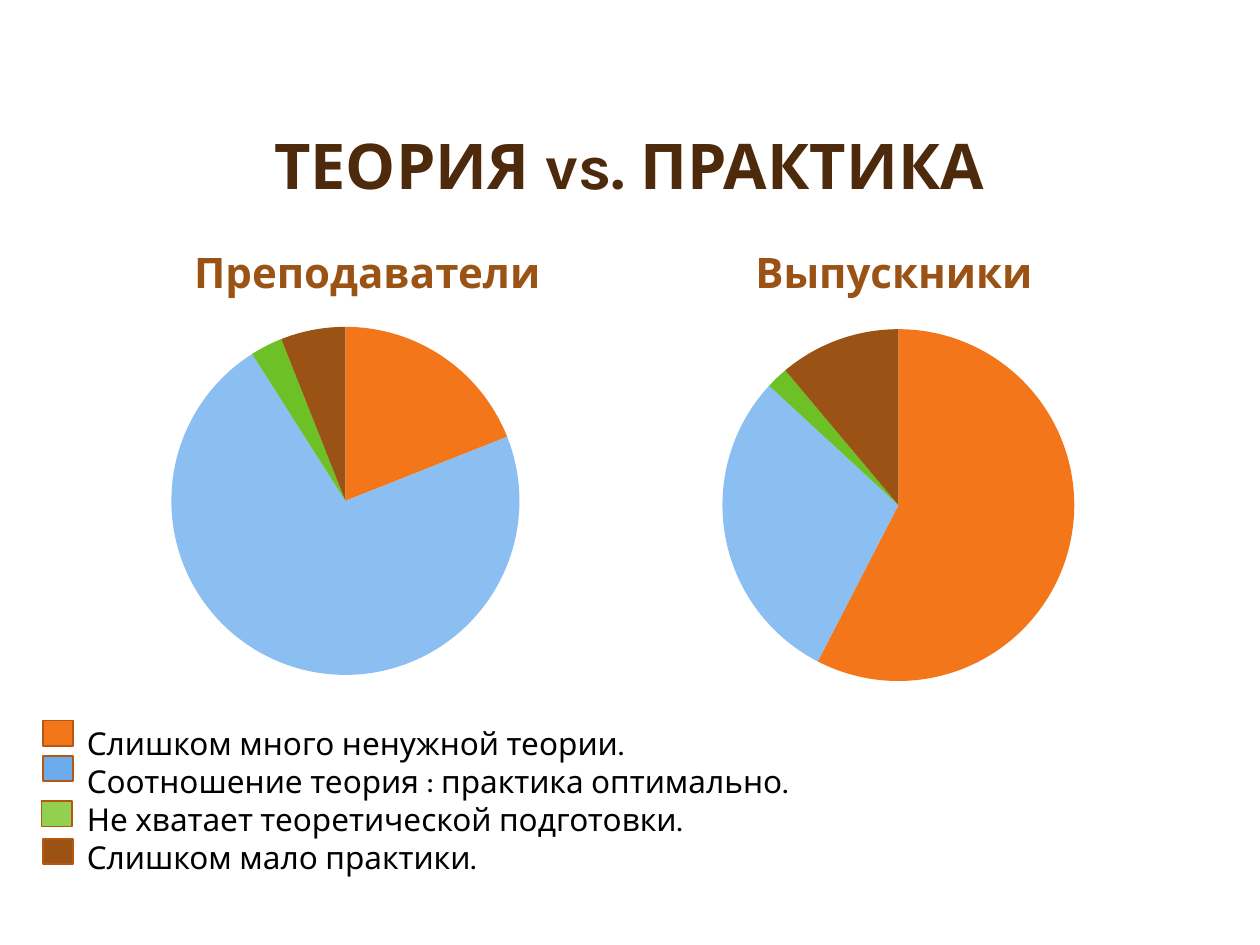
import pptx
import pptx.chart.data
import pptx.dml.color
import pptx.enum.chart
import pptx.enum.shapes
import pptx.enum.text
import pptx.util
from lxml import etree
from pptx.oxml.ns import qn

Pt = pptx.util.Pt
FONT = "Karla"
COLORS = {
    "title": "4D2A0B", "heading": "9A5315", "text": "000000", "border": "B45813",
    "orange": "F3771A", "blue": "8BBEF1", "green": "6DC025", "brown": "9A5315",
    "key_blue": "6CACEC", "key_green": "92D050",
}
SLICES = ["orange", "blue", "green", "brown"]
LEGEND = [
    # text, key colour, key left, key top
    ("Слишком много ненужной теории.", "orange", 24.5, 411.8),
    ("Соотношение теория : практика оптимально.", "key_blue", 24.5, 432),
    ("Не хватает теоретической подготовки.", "key_green", 23.8, 457.9),
    ("Слишком мало практики.", "brown", 24.5, 479.5),
]


def rgb(name):
    return pptx.dml.color.RGBColor.from_string(COLORS[name])


def set_font(font, size, color, bold=False):
    font.name, font.size, font.bold = FONT, Pt(size), bold
    font.color.rgb = rgb(color)


def add_text(s, box, lines, size, color, bold=False, centered=False, spacing=None):
    """Add a text box with one paragraph per line; centred text sits at the bottom."""
    tf = s.shapes.add_textbox(*map(Pt, box)).text_frame
    tf.word_wrap = True
    if centered:
        tf.vertical_anchor = pptx.enum.text.MSO_ANCHOR.BOTTOM
    for i, line in enumerate(lines):
        p = tf.add_paragraph() if i else tf.paragraphs[0]
        if centered:
            p.alignment = pptx.enum.text.PP_ALIGN.CENTER
        if spacing:
            p.line_spacing = spacing
        r = p.add_run()
        r.text = line
        set_font(r.font, size, color, bold)


def set_plot_layout(chart, x, y, w, h):
    """Place the inner plot area, in fractions of the chart."""
    plot_area = chart.plots[0]._element.getparent()
    layout = plot_area.find(qn("c:layout"))
    if layout is None:
        layout = etree.Element(qn("c:layout"))
        plot_area.insert(0, layout)
    manual = etree.SubElement(layout, qn("c:manualLayout"))
    settings = [("layoutTarget", "inner"), ("xMode", "edge"), ("yMode", "edge"),
                ("x", x), ("y", y), ("w", w), ("h", h)]
    for tag, value in settings:
        etree.SubElement(manual, qn(f"c:{tag}")).set("val", str(value))


def add_pie(s, box, values, layout):
    data = pptx.chart.data.CategoryChartData()
    data.categories = ["1", "2", "3", "4"]
    data.add_series("Series 1", values)
    chart = s.shapes.add_chart(
        pptx.enum.chart.XL_CHART_TYPE.PIE, *map(Pt, box), data).chart
    chart.has_title = False
    chart.has_legend = False
    set_font(chart.font, 18, "heading")
    chart.plots[0].vary_by_categories = True
    for i, color in enumerate(SLICES):
        fill = chart.series[0].points[i].format.fill
        fill.solid()
        fill.fore_color.rgb = rgb(color)
    set_plot_layout(chart, *layout)


def add_key(s, left, top, color):
    sp = s.shapes.add_shape(pptx.enum.shapes.MSO_SHAPE.RECTANGLE,
                            Pt(left), Pt(top), Pt(17.3), Pt(14.4))
    sp.shadow.inherit = False
    sp.fill.solid()
    sp.fill.fore_color.rgb = rgb(color)
    sp.line.color.rgb = rgb("border")
    sp.line.width = Pt(1)


def main():
    prs = pptx.Presentation()
    prs.slide_width, prs.slide_height = Pt(720), Pt(540)
    s = prs.slides.add_slide(prs.slide_layouts[6])

    add_text(s, (62.6, 23.8, 594, 95.8), ["ТЕОРИЯ vs. ПРАКТИКА"], 36, "title",
             bold=True, centered=True, spacing=0.9)
    for left, heading in ((63.4, "Преподаватели"), (364.3, "Выпускники")):
        add_text(s, (left, 132.5, 293, 41), [heading], 24, "heading",
                 bold=True, centered=True)

    add_pie(s, (59.8, 177.1, 302.4, 242.6), (19, 72, 3, 6), (0.04, 0.04, 0.83, 0.82))
    add_pie(s, (377.3, 179.3, 272.2, 221), (57, 29, 2, 11), (0.04, 0.04, 0.92, 0.91))

    add_text(s, (42.5, 410.4, 668.9, 94.3), [row[0] for row in LEGEND], 18, "text")
    for _, color, left, top in LEGEND:
        add_key(s, left, top, color)

    prs.save("out.pptx")


if __name__ == "__main__":
    main()
